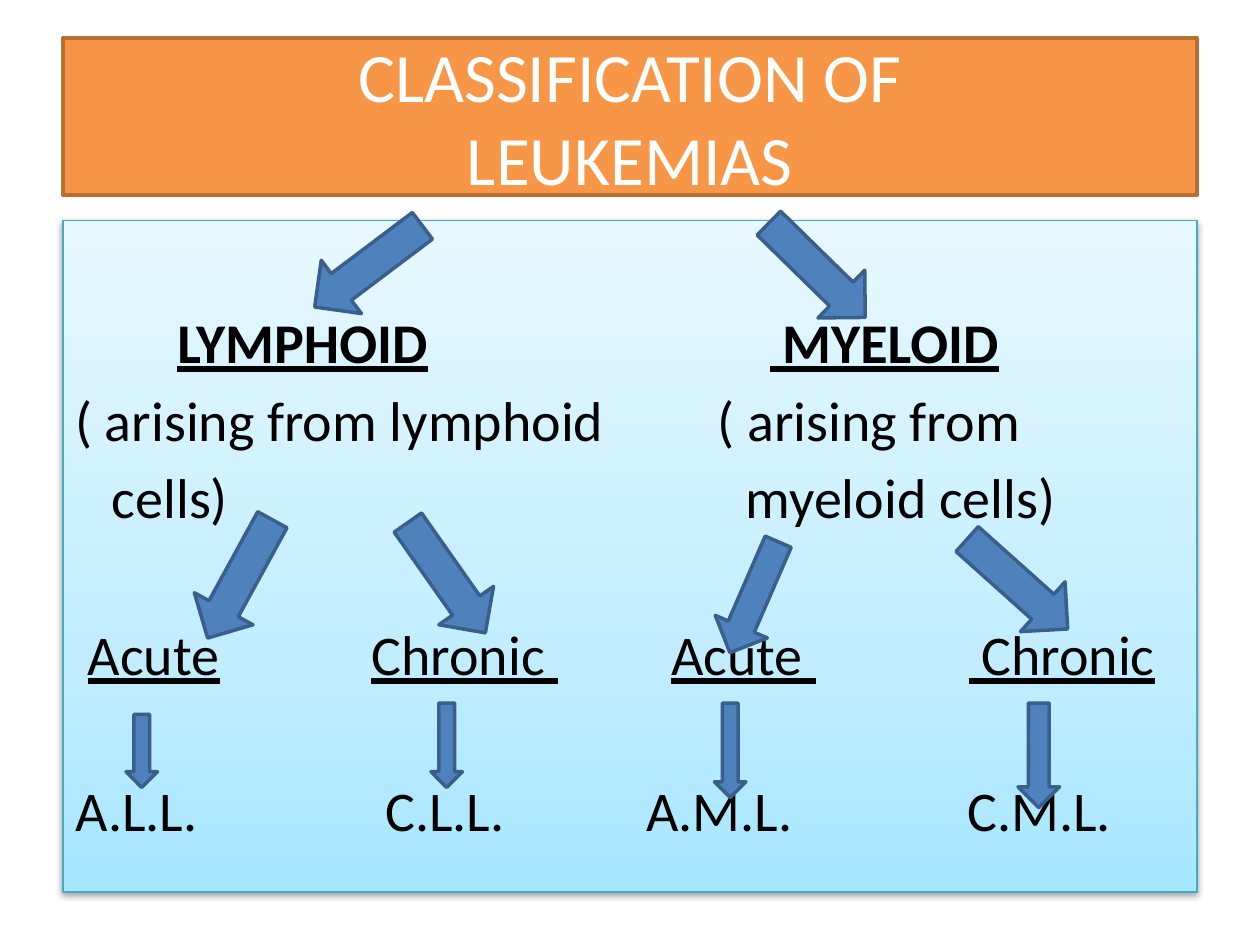
from copy import deepcopy

from lxml.etree import SubElement
from pptx import Presentation
from pptx.dml.color import RGBColor
from pptx.enum.shapes import MSO_SHAPE
from pptx.enum.text import MSO_ANCHOR, PP_ALIGN
from pptx.oxml.ns import qn
from pptx.util import Emu, Pt

PX = 9144  # 100 px to the inch

ORANGE = RGBColor(0xF7, 0x96, 0x46)
BROWN = RGBColor(0xB7, 0x6F, 0x34)
BLUE = RGBColor(0x4F, 0x81, 0xBD)
NAVY = RGBColor(0x3A, 0x5F, 0x8C)
TEAL = RGBColor(0x46, 0xAA, 0xC5)
WHITE = RGBColor(0xFF, 0xFF, 0xFF)
BLACK = RGBColor(0, 0, 0)
SKY = [(0, RGBColor(0xA7, 0xE6, 0xFF)), (0.35, RGBColor(0xC1, 0xED, 0xFF)),
       (1, RGBColor(0xE7, 0xF8, 0xFF))]

TITLE = (50, 30, 900, 125)
BODY = (50, 175, 900, 533)

BOLD = {"bold": True, "underline": True}
LINED = {"underline": True}
PLAIN = {}

# Space before in points, run format, (tab stop in px, text) pairs
ROWS = [
    (0, BOLD, [(81, "LYMPHOID"), (551, " MYELOID")]),
    (6, PLAIN, [(0, "( arising from lymphoid"), (510, "( arising from")]),
    (6, PLAIN, [(29, "cells)"), (532, "myeloid cells)")]),
    (51, LINED, [(10, "Acute"), (235, "Chronic "), (473, "Acute "), (709, " Chronic")]),
    (51, PLAIN, [(0, "A.L.L."), (246, "C.L.L."), (453, "A.M.L."), (708, "C.M.L.")]),
]

# Left, top, width, height within the body, then rotation
ARROWS = [
    (216, -17, 53, 107, 53),
    (572, -14, 53, 107, 314.4),
    (114, 231, 53, 107, 28.7),
    (278, 230, 53, 107, 324.9),
    (526, 251, 45, 96, 23.5),
    (731, 235, 53, 107, 311.8),
    (50, 392, 25, 58, 0),
    (292, 383, 25, 67, 0),
    (517, 383, 25, 75, 0),
    (758, 383, 33, 83, 0),
]


def put(thing, values):
    for name, value in values.items():
        setattr(thing, name, value)


def add_box(slide, kind, box, fill, edge, width):
    shape = slide.shapes.add_shape(kind, *[Emu(n * PX) for n in box])
    shape.shadow.inherit = False
    if fill:
        shape.fill.solid()
        shape.fill.fore_color.rgb = fill
    shape.line.color.rgb = edge
    shape.line.width = Pt(width)
    return shape


def add_run(para, text, color, size, form):
    run = para.add_run()
    run.text = text
    put(run.font, {"name": "Calibri", "size": Pt(size), **form})
    run.font.color.rgb = color


def add_title(slide, box):
    shape = add_box(slide, MSO_SHAPE.RECTANGLE, box, ORANGE, BROWN, 2)
    frame = shape.text_frame
    put(frame, {"word_wrap": True, "vertical_anchor": MSO_ANCHOR.MIDDLE})
    para = frame.paragraphs[0]
    para.alignment = PP_ALIGN.CENTER
    add_run(para, "CLASSIFICATION OF", WHITE, 39.6, PLAIN)
    para.add_line_break()
    add_run(para, "LEUKEMIAS", WHITE, 39.6, PLAIN)


def shade(shape):
    """Give the panel its three-stop gradient and soft shadow."""
    fill = shape.fill
    fill.gradient()
    fill.gradient_angle = 90
    stops = shape.element.spPr.find(".//" + qn("a:gsLst"))
    stops.insert(1, deepcopy(stops[0]))
    for stop, (place, color) in zip(fill.gradient_stops, SKY):
        stop.position = place
        stop.color.rgb = color
    effects = shape.element.spPr.find(qn("a:effectLst"))
    shadow = SubElement(effects, qn("a:outerShdw"), blurRad=str(Pt(3.1)),
                        dist=str(Pt(1.6)), dir="5400000", rotWithShape="0")
    black = SubElement(shadow, qn("a:srgbClr"), val="000000")
    SubElement(black, qn("a:alpha"), val="38000")


def add_row(para, gap, form, cells):
    """Write one line of the tree, each text at its own tab stop."""
    put(para, {"alignment": PP_ALIGN.LEFT, "space_before": Pt(gap)})
    tabs = SubElement(para._p.get_or_add_pPr(), qn("a:tabLst"))
    for stop, text in cells:
        if stop:
            SubElement(tabs, qn("a:tab"), pos=str(stop * PX), algn="l")
            add_run(para, "\t", BLACK, 32, PLAIN)
        add_run(para, text, BLACK, 32, form)


def add_body(slide, box):
    panel = add_box(slide, MSO_SHAPE.RECTANGLE, box, None, TEAL, 0.75)
    shade(panel)
    frame = panel.text_frame
    put(frame, {"word_wrap": True, "vertical_anchor": MSO_ANCHOR.TOP,
                "margin_top": Emu(69 * PX)})
    for i, row in enumerate(ROWS):
        add_row(frame.add_paragraph() if i else frame.paragraphs[0], *row)
    left, top = box[:2]
    for x, y, w, h, turn in ARROWS:
        arrow = add_box(slide, MSO_SHAPE.DOWN_ARROW, (left + x, top + y, w, h),
                        BLUE, NAVY, 2)
        arrow.rotation = turn


def main():
    deck = Presentation()
    put(deck, {"slide_width": Emu(1000 * PX), "slide_height": Emu(750 * PX)})
    slide = deck.slides.add_slide(deck.slide_layouts[6])
    add_title(slide, TITLE)
    add_body(slide, BODY)
    deck.save("out.pptx")


if __name__ == "__main__":
    main()
